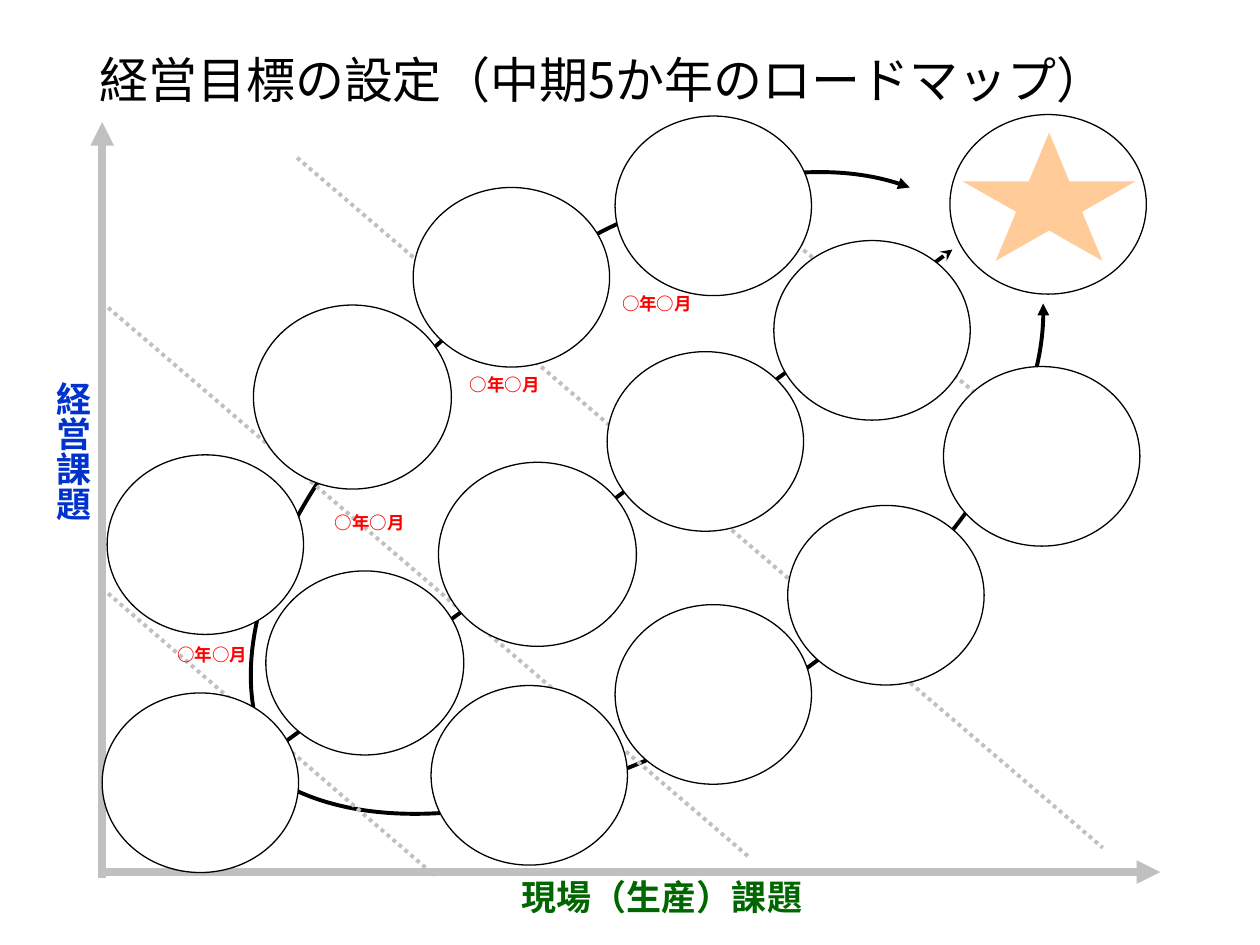
from lxml.etree import SubElement
from pptx import Presentation
from pptx.dml.color import RGBColor
from pptx.enum.dml import MSO_LINE
from pptx.enum.shapes import MSO_CONNECTOR, MSO_SHAPE
from pptx.enum.text import MSO_ANCHOR, MSO_AUTO_SIZE, PP_ALIGN
from pptx.oxml.ns import qn
from pptx.util import Cm, Pt

# Content: all lengths in cm
FONT = "Noto Sans CJK JP"
BLACK, WHITE, GRAY = "000000", "FFFFFF", "C0C0C0"
TITLE = "経営目標の設定（中期5か年のロードマップ）"
DATE = "○年○月"
DATE_SPOTS = [(3.33, 12.85), (6.5, 10.19), (9.22, 7.42), (12.29, 5.79)]

SMALL, LARGE = (3.96, 3.62), (3.99, 3.71)
GOAL = (19.15, 2.31)
MILESTONES = {
    "start": [(2.06, 13.97, SMALL)],
    "upper": [(2.16, 9.17, SMALL), (5.11, 6.15, LARGE),
              (8.33, 3.78, SMALL), (12.4, 2.34, SMALL)],
    "middle": [(5.36, 11.51, LARGE), (8.84, 9.32, LARGE),
               (12.24, 7.09, SMALL), (15.6, 4.85, SMALL)],
    "lower": [(8.69, 13.82, SMALL), (12.4, 12.19, SMALL),
              (15.88, 10.19, SMALL), (19.02, 7.39, SMALL)],
}

# Curved routes: arrow tip, then three Bezier points per segment
LOWER_ROUTE = [(21.03, 6.12),
               (21.13, 8.64), (18.85, 11.84), (15.42, 14.05),
               (11.71, 16.43), (7.59, 17.09), (5.46, 15.65)]
UPPER_ROUTE = [(18.34, 3.78),
               (16.13, 2.92), (12.62, 3.94), (9.63, 6.27),
               (6.38, 8.81), (4.55, 12.24), (5.18, 14.6)]
MIDDLE_ROUTE = (4.78, 15.67, 19.2, 5.03)
YEAR_LINES = [(2.06, 11.86, 8.76, 17.65), (2.06, 6.1, 15.09, 17.27),
              (5.99, 3.18, 22.23, 17.09), (13.89, 3.12, 22.23, 10.06)]
AXES = [(2.06, 17.58, 23.39, 17.58), (2.06, 17.7, 2.06, 2.46)]


def rgb(color):
    return RGBColor.from_string(color)


def set_line(sp, color, width):
    sp.line.color.rgb = rgb(color)
    sp.line.width = Pt(width)


def add_arrowhead(sp, end, kind):
    ln = sp._element.spPr.find(qn("a:ln"))
    SubElement(ln, qn(f"a:{end}"), type=kind)


def add_line(s, ends, color, width, dash=None, arrow=None):
    line = s.shapes.add_connector(MSO_CONNECTOR.STRAIGHT, *map(Cm, ends))
    set_line(line, color, width)
    if dash:
        line.line.dash_style = dash
    if arrow:
        add_arrowhead(line, "tailEnd", arrow)
    SubElement(line._element.spPr, qn("a:effectLst"))


def add_route(s, points):
    pts = [(Cm(x), Cm(y)) for x, y in points]
    builder = s.shapes.build_freeform(*pts[0])
    builder.add_line_segments(pts[1:], close=False)
    sp = builder.convert_to_shape()
    sp.shadow.inherit = False
    sp.fill.background()
    set_line(sp, BLACK, 2.25)
    add_arrowhead(sp, "headEnd", "triangle")
    # Turn each three straight steps into one Bezier segment
    path = next(sp._element.iter(qn("a:path")))
    steps = path.findall(qn("a:lnTo"))
    for i in range(0, len(steps), 3):
        curve = SubElement(path, qn("a:cubicBezTo"))
        for step in steps[i:i + 3]:
            curve.append(step[0])
            path.remove(step)


def add_solid(s, kind, x, y, w, h, fill, outline=None):
    sp = s.shapes.add_shape(kind, Cm(x), Cm(y), Cm(w), Cm(h))
    sp.shadow.inherit = False
    sp.fill.solid()
    sp.fill.fore_color.rgb = rgb(fill)
    if outline:
        set_line(sp, outline, 0.75)
    else:
        sp.line.fill.background()


def format_text(p, size, color, bold, align):
    p.alignment = align
    p.font.size = Pt(size)
    p.font.bold = bold
    p.font.color.rgb = rgb(color)
    p.font.name = FONT
    SubElement(p._p.pPr.find(qn("a:defRPr")), qn("a:ea"), typeface=FONT)


def add_label(s, text, box, size, color, align, wrap=True, vertical=False):
    tf = s.shapes.add_textbox(*map(Cm, box)).text_frame
    tf.word_wrap = wrap
    tf.auto_size = MSO_AUTO_SIZE.SHAPE_TO_FIT_TEXT
    if vertical:
        tf._txBody.bodyPr.set("vert", "eaVert")
    p = tf.paragraphs[0]
    p.text = text
    format_text(p, size, color, True, align)


def main():
    prs = Presentation()
    prs.slide_width, prs.slide_height = Cm(25.4), Cm(19.05)
    s = prs.slides.add_slide(prs.slide_layouts[5])

    # Title
    title = s.shapes.title
    title.left, title.top, title.width, title.height = map(
        Cm, (1.75, 0.89, 21.89, 1.55))
    tf = title.text_frame
    tf.text = TITLE
    tf.auto_size = MSO_AUTO_SIZE.NONE
    tf.vertical_anchor = MSO_ANCHOR.MIDDLE
    tf.paragraphs[0].line_spacing = 0.9
    format_text(tf.paragraphs[0], 28, BLACK, False, PP_ALIGN.LEFT)

    # Goal
    add_solid(s, MSO_SHAPE.OVAL, *GOAL, *SMALL, WHITE, BLACK)
    add_solid(s, MSO_SHAPE.STAR_5_POINT, 19.41, 2.67, 3.48, 2.59, "FFCC99")

    # Routes, year lines and axes
    for route in (LOWER_ROUTE, UPPER_ROUTE):
        add_route(s, route)
    add_line(s, MIDDLE_ROUTE, BLACK, 2.25, arrow="stealth")
    for ends in YEAR_LINES:
        add_line(s, ends, GRAY, 2.25, dash=MSO_LINE.ROUND_DOT)
    for ends in AXES:
        add_line(s, ends, GRAY, 4.5, arrow="triangle")

    # Milestones along the routes
    for stops in MILESTONES.values():
        for x, y, size in stops:
            add_solid(s, MSO_SHAPE.OVAL, x, y, *size, WHITE, BLACK)

    # Axis names and dates
    add_label(s, "現場（生産）課題", (10.08, 17.53, 6.53, 1.12), 20,
              "006600", PP_ALIGN.CENTER)
    add_label(s, "経営課題", (0.64, 7.44, 1.37, 5.59), 20,
              "0033CC", PP_ALIGN.CENTER, vertical=True)
    for x, y in DATE_SPOTS:
        add_label(s, DATE, (x, y, 1.93, 0.69), 10, "FF0000",
                  PP_ALIGN.LEFT, wrap=False)

    prs.save("out.pptx")


if __name__ == "__main__":
    main()
